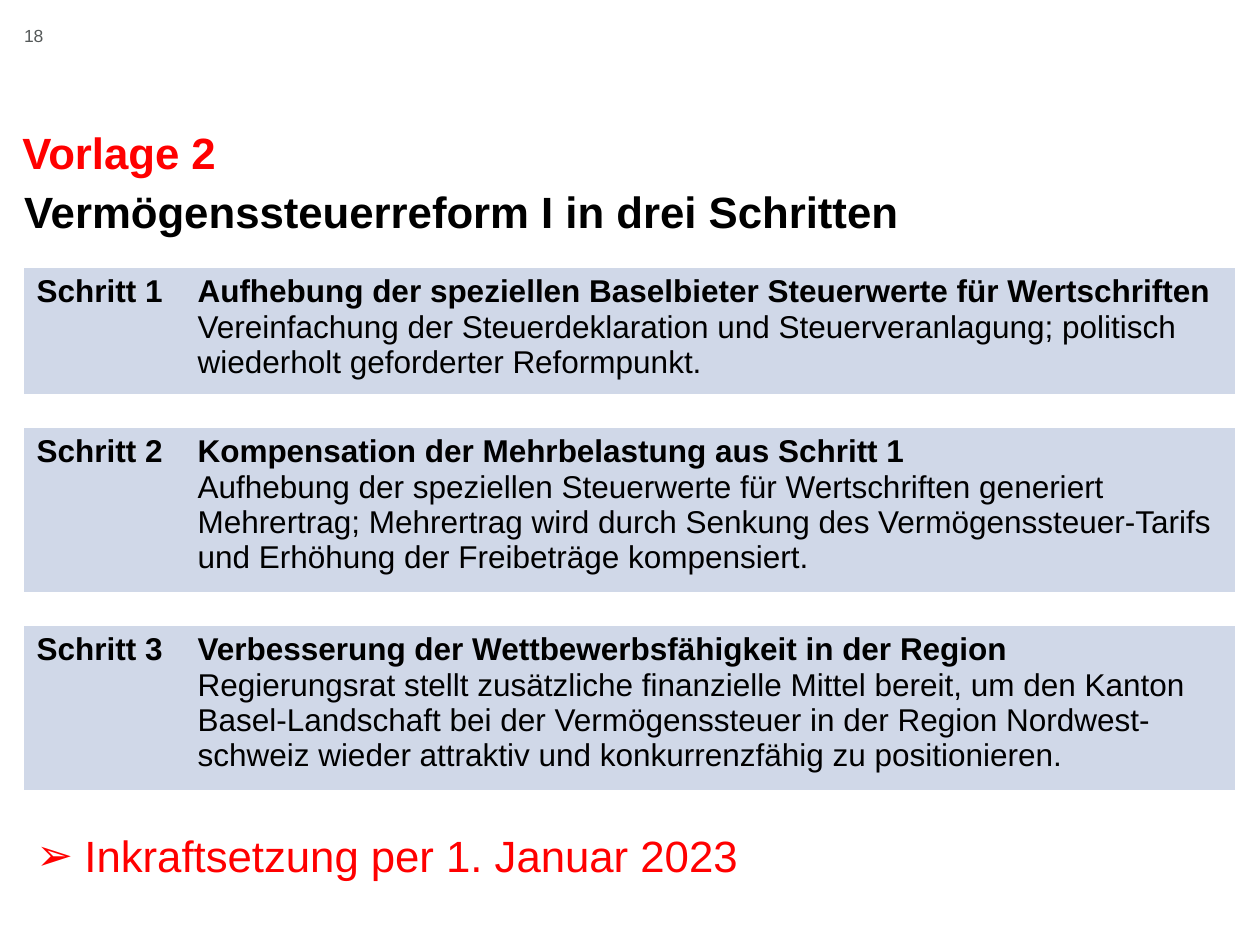
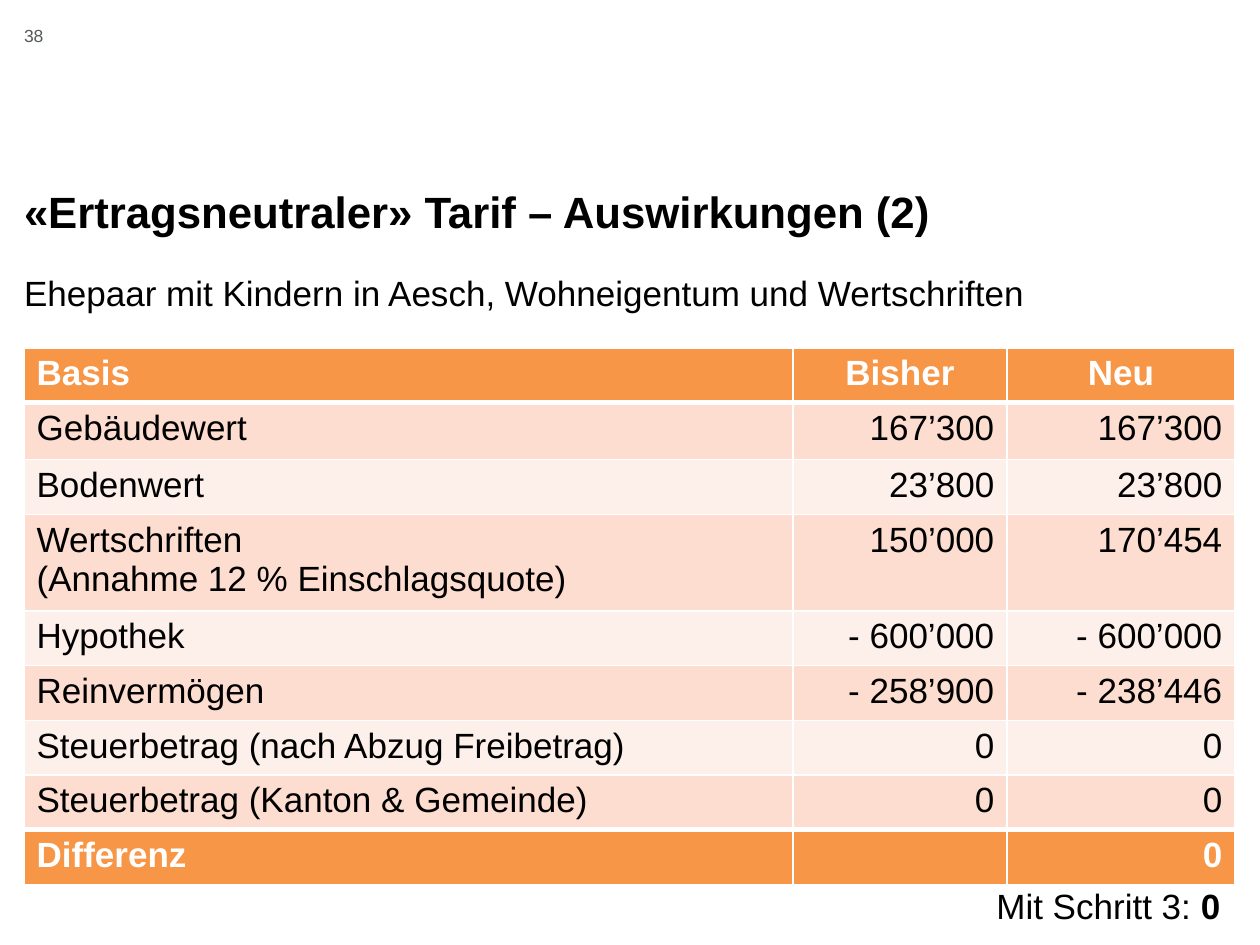
from lxml import etree
from pptx import Presentation
from pptx.dml.color import RGBColor
from pptx.enum.text import MSO_ANCHOR, MSO_AUTO_SIZE, PP_ALIGN
from pptx.oxml.ns import qn
from pptx.util import Emu, Pt

LEFT, CENTER, RIGHT = PP_ALIGN.LEFT, PP_ALIGN.CENTER, PP_ALIGN.RIGHT
TOP, BOTTOM = MSO_ANCHOR.TOP, MSO_ANCHOR.BOTTOM
FIT_SHAPE, FIT_NONE = MSO_AUTO_SIZE.SHAPE_TO_FIT_TEXT, MSO_AUTO_SIZE.NONE
PX_PER_INCH = 126
FONT = "Arial"
BLACK, WHITE, RED, GREY = "000000", "FFFFFF", "FF0000", "555959"
STEP_FILL, ACCENT, BAND_DARK, BAND_LIGHT = "D0D8E8", "F79646", "FCDDCF", "FDEFE9"
PLAIN_TABLE = "{2D5ABB26-0587-4C30-8999-92F81FD0307C}"
TITLE_ONLY, TITLE_AND_BODY = 5, 1
MARGIN, CONTENT_WIDTH = 24, 1211

STEPS = [
    ("Schritt 1", 117,
     "Aufhebung der speziellen Baselbieter Steuerwerte für Wertschriften",
     "Vereinfachung der Steuerdeklaration und Steuerveranlagung; politisch "
     "wiederholt geforderter Reformpunkt."),
    ("Schritt 2", 152,
     "Kompensation der Mehrbelastung aus Schritt 1",
     "Aufhebung der speziellen Steuerwerte für Wertschriften generiert Mehrertrag; "
     "Mehrertrag wird durch Senkung des Vermögenssteuer-Tarifs und Erhöhung der "
     "Freibeträge kompensiert."),
    ("Schritt 3", 153,
     "Verbesserung der Wettbewerbsfähigkeit in der Region",
     "Regierungsrat stellt zusätzliche finanzielle Mittel bereit, um den Kanton "
     "Basel-Landschaft bei der Vermögenssteuer in der Region Nordwest-schweiz wieder "
     "attraktiv und konkurrenzfähig zu positionieren."),
]
TARIFF_ROWS = [
    (52, ["Basis"], "Bisher", "Neu"),
    (57, ["Gebäudewert"], "167’300", "167’300"),
    (53, ["Bodenwert"], "23’800", "23’800"),
    (93, ["Wertschriften", "(Annahme 12 % Einschlagsquote)"], "150’000", "170’454"),
    (53, ["Hypothek"], "- 600’000", "- 600’000"),
    (53, ["Reinvermögen"], "- 258’900", "- 238’446"),
    (53, ["Steuerbetrag (nach Abzug Freibetrag)"], "0", "0"),
    (53, ["Steuerbetrag (Kanton & Gemeinde)"], "0", "0"),
    (53, ["Differenz"], "", "0"),
]


def px(length):
    return Emu(round(length * 914400 / PX_PER_INCH))


def rgb(color):
    return RGBColor.from_string(color)


def place(shape, left, top, width, height):
    shape.left, shape.top = px(left), px(top)
    shape.width, shape.height = px(width), px(height)


def clear_insets(frame):
    frame.margin_left = frame.margin_right = 0
    frame.margin_top = frame.margin_bottom = 0


def write(frame, paragraphs, size, color=BLACK, align=LEFT):
    for index, spans in enumerate(paragraphs):
        para = frame.add_paragraph() if index else frame.paragraphs[0]
        para.alignment = align
        for text, bold in spans:
            span = para.add_run()
            span.text = text
            span.font.name = FONT
            span.font.size = Pt(size)
            span.font.bold = bold
            span.font.color.rgb = rgb(color)


def set_bullet(para, symbol=None, indent=0):
    properties = para._p.get_or_add_pPr()
    properties.set("marL", str(px(indent)))
    properties.set("indent", str(-px(indent)))
    if symbol:
        etree.SubElement(properties, qn("a:buFont"), typeface=FONT)
        etree.SubElement(properties, qn("a:buChar"), char=symbol)
    else:
        etree.SubElement(properties, qn("a:buNone"))


def add_label(page, bounds, spans, size, color=BLACK, wrap=False):
    box = page.shapes.add_textbox(*map(px, bounds))
    frame = box.text_frame
    frame.word_wrap = wrap
    frame.auto_size = FIT_SHAPE
    write(frame, [spans], size, color)
    return frame


def add_page(deck, layout, number, title):
    page = deck.slides.add_slide(deck.slide_layouts[layout])
    heading = page.shapes.title
    place(heading, MARGIN, 134, CONTENT_WIDTH, 102)
    frame = heading.text_frame
    clear_insets(frame)
    frame.auto_size = FIT_NONE
    frame.vertical_anchor = BOTTOM
    write(frame, [[(title, True)]], 25)
    frame.paragraphs[0].line_spacing = 0.7
    number_box = page.shapes.add_textbox(px(MARGIN), px(25), px(55), px(50))
    number_box.text_frame.word_wrap = True
    clear_insets(number_box.text_frame)
    write(number_box.text_frame, [[(number, False)]], 10, GREY)
    return page


def add_plain_table(page, top, widths, heights):
    frame = page.shapes.add_table(len(heights), len(widths), px(MARGIN), px(top),
                                  px(sum(widths)), px(sum(heights)))
    table = frame.table
    table.first_row = table.horz_banding = False
    table._tbl.tblPr.find(qn("a:tableStyleId")).text = PLAIN_TABLE
    for column, width in zip(table.columns, widths):
        column.width = px(width)
    for row, height in zip(table.rows, heights):
        row.height = px(height)
    return table


def fill_cell(cell, color):
    cell.fill.solid()
    cell.fill.fore_color.rgb = rgb(color)


def set_borders(cell, top, bottom):
    properties = cell._tc.get_or_add_tcPr()
    for side, width in (("L", 1), ("R", 1), ("T", top), ("B", bottom)):
        line = etree.SubElement(properties, qn(f"a:ln{side}"), w=str(Pt(width)))
        fill = etree.SubElement(line, qn("a:solidFill"))
        etree.SubElement(fill, qn("a:srgbClr"), val=WHITE)


def shrink_empty_cell(cell):
    cell.margin_top = cell.margin_bottom = 0
    etree.SubElement(cell.text_frame.paragraphs[0]._p, qn("a:endParaRPr"), sz="800")


def add_steps_table(page):
    gap = 34
    heights = []
    for step in STEPS:
        heights += [step[1], gap]
    table = add_plain_table(page, 268, [161, 1050], heights[:-1])
    for index, (name, _, heading, detail) in enumerate(STEPS):
        name_cell, text_cell = table.rows[2 * index].cells
        write(name_cell.text_frame, [[(name, True)]], 18)
        write(text_cell.text_frame, [[(heading, True)], [(detail, False)]], 18)
        fill_cell(name_cell, STEP_FILL)
        fill_cell(text_cell, STEP_FILL)
    for index in range(1, len(heights) - 1, 2):
        for cell in table.rows[index].cells:
            shrink_empty_cell(cell)


def add_tariff_table(page):
    table = add_plain_table(page, 348, [769, 214, 228], [row[0] for row in TARIFF_ROWS])
    last = len(TARIFF_ROWS) - 1
    for index, (_, label, before, after) in enumerate(TARIFF_ROWS):
        strong = index in (0, last)
        fill = ACCENT if strong else BAND_DARK if index % 2 else BAND_LIGHT
        top = 3 if index in (1, last) else 1
        bottom = 3 if index in (0, last - 1) else 1
        number_align = RIGHT if index else CENTER
        for column, lines in enumerate((label, [before], [after])):
            cell = table.cell(index, column)
            set_borders(cell, top, bottom)
            fill_cell(cell, fill)
            paragraphs = [[(line, strong)] for line in lines if line]
            write(cell.text_frame, paragraphs, 20, WHITE if strong else BLACK,
                  number_align if column else LEFT)


def add_intro(page, text):
    body = page.placeholders[1]
    place(body, MARGIN, 271, CONTENT_WIDTH, 612)
    frame = body.text_frame
    clear_insets(frame)
    frame.auto_size = FIT_NONE
    frame.vertical_anchor = TOP
    para = frame.paragraphs[0]
    set_bullet(para)
    para.space_before = Pt(0)
    para.space_after = Pt(12.5)
    write(frame, [[(text, False)]], 20)


def main():
    deck = Presentation()
    deck.slide_width, deck.slide_height = px(1260), px(945)

    page = add_page(deck, TITLE_ONLY, "18", "Vermögenssteuerreform I in drei Schritten")
    add_steps_table(page)
    effective_date = add_label(page, (24, 823, 737, 66),
                               [("Inkraftsetzung per 1. Januar 2023", False)], 25, RED, True)
    set_bullet(effective_date.paragraphs[0], "➢", 48)
    add_label(page, (10, 120, 220, 66), [("Vorlage 2", True)], 25, RED)

    page = add_page(deck, TITLE_AND_BODY, "38", "«Ertragsneutraler» Tarif – Auswirkungen (2)")
    add_intro(page, "Ehepaar mit Kindern in Aesch, Wohneigentum und Wertschriften")
    add_tariff_table(page)
    add_label(page, (984, 878, 251, 55), [("Mit Schritt 3: ", False), ("0", True)], 20)

    deck.save("out.pptx")


if __name__ == "__main__":
    main()
